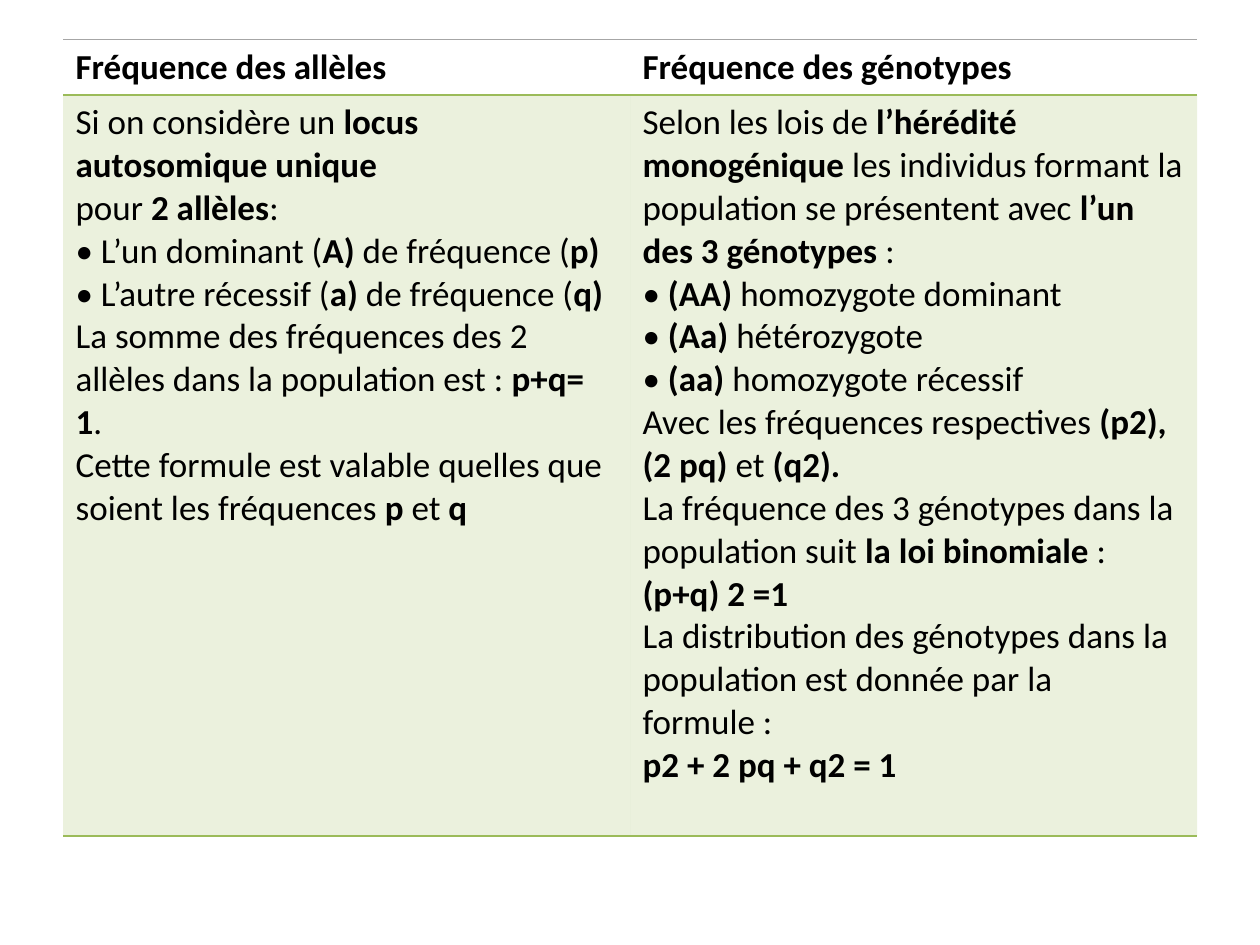
from dataclasses import dataclass

from lxml import etree
from pptx import Presentation
from pptx.dml.color import RGBColor
from pptx.oxml import ns
from pptx.util import Pt


@dataclass(frozen=True)
class Theme:
    font: str = "Calibri"
    size: int = 20
    ink: str = "000000"
    green: str = "9BBB59"
    grey: str = "A6A6A6"
    tint: int = 20


HEADINGS = ["**Fréquence des allèles**", "**Fréquence des génotypes**"]
ALLELES = [
    "Si on considère un **locus autosomique unique**",
    "pour **2 allèles**:",
    "• L’un dominant (**A) **de fréquence (**p)**",
    "• L’autre récessif (**a) **de fréquence (**q)**",
    "La somme des fréquences des 2 allèles dans la population est : **p+q= 1**.",
    "Cette formule est valable quelles que soient les fréquences **p **et **q**",
]
GENOTYPES = [
    "Selon les lois de **l’hérédité monogénique **les individus formant la "
    "population se présentent avec **l’un des 3 génotypes **:",
    "• **(AA) **homozygote dominant",
    "• **(Aa) **hétérozygote",
    "• **(aa) **homozygote récessif",
    "Avec les fréquences respectives **(p2), (2 pq) **et **(q2).**",
    "La fréquence des 3 génotypes dans la",
    "population suit **la loi binomiale **: **(p+q) 2 =1**",
    "La distribution des génotypes dans la",
    "population est donnée par la formule :",
    "**p2 + 2 pq + q2 = 1**",
]
NO_STYLE_NO_GRID = "{2D5ABB26-0587-4C30-8999-92F81FD0307C}"


def add_text(paragraph, marked, *, font, size, color):
    """Write text in which ** switches bold on and off."""
    for index, part in enumerate(marked.split("**")):
        if part:
            run = paragraph.add_run()
            run.text = part
            run.font.name = font
            run.font.size = Pt(size)
            run.font.bold = index % 2 == 1
            run.font.color.rgb = RGBColor.from_string(color)


class SlideBuilder:
    def __init__(self, slide, theme):
        self.slide = slide
        self.theme = theme

    def table(self, left, top, widths, heights, rows):
        frame = self.slide.shapes.add_table(
            len(heights), len(widths), Pt(left), Pt(top),
            Pt(sum(widths)), Pt(sum(heights)))
        table = frame.table
        table.first_row = table.horz_banding = False
        table._tbl.tblPr.find(ns.qn("a:tableStyleId")).text = NO_STYLE_NO_GRID
        for column, width in zip(table.columns, widths):
            column.width = Pt(width)
        for row, height, contents in zip(table.rows, heights, rows):
            row.height = Pt(height)
            for cell, paragraphs in zip(row.cells, contents):
                self.cell_text(cell, paragraphs)
        return table

    def cell_text(self, cell, paragraphs):
        frame = cell.text_frame
        for index, marked in enumerate(paragraphs):
            paragraph = frame.add_paragraph() if index else frame.paragraphs[0]
            add_text(paragraph, marked, font=self.theme.font,
                     size=self.theme.size, color=self.theme.ink)

    def cell_fill(self, cell, color, opacity):
        cell.fill.solid()
        cell.fill.fore_color.rgb = RGBColor.from_string(color)
        rgb = cell._tc.tcPr.find(".//" + ns.qn("a:srgbClr"))
        etree.SubElement(rgb, ns.qn("a:alpha"), val=str(opacity * 1000))

    def cell_borders(self, cell, **borders):
        """Draw borders given as T=(color, width) and B=(color, width), in that order."""
        properties = cell._tc.get_or_add_tcPr()
        for index, (side, (color, width)) in enumerate(borders.items()):
            line = etree.Element(ns.qn(f"a:ln{side}"), w=str(Pt(width)))
            solid = etree.SubElement(line, ns.qn("a:solidFill"))
            etree.SubElement(solid, ns.qn("a:srgbClr"), val=color)
            properties.insert(index, line)


def main():
    theme = Theme()
    deck = Presentation()
    deck.slide_width, deck.slide_height = Pt(720), Pt(540)
    builder = SlideBuilder(deck.slides.add_slide(deck.slide_layouts[6]), theme)

    frequencies = builder.table(
        36, 22.5, widths=[324, 324], heights=[31.6, 423.4],
        rows=[[[heading] for heading in HEADINGS], [ALLELES, GENOTYPES]])

    rule = (theme.green, 1)
    for heading, body in zip(frequencies.rows[0].cells, frequencies.rows[1].cells):
        builder.cell_borders(heading, T=(theme.grey, 0.5), B=rule)
        builder.cell_fill(body, theme.green, theme.tint)
        builder.cell_borders(body, T=rule, B=rule)

    deck.save("out.pptx")


if __name__ == "__main__":
    main()
